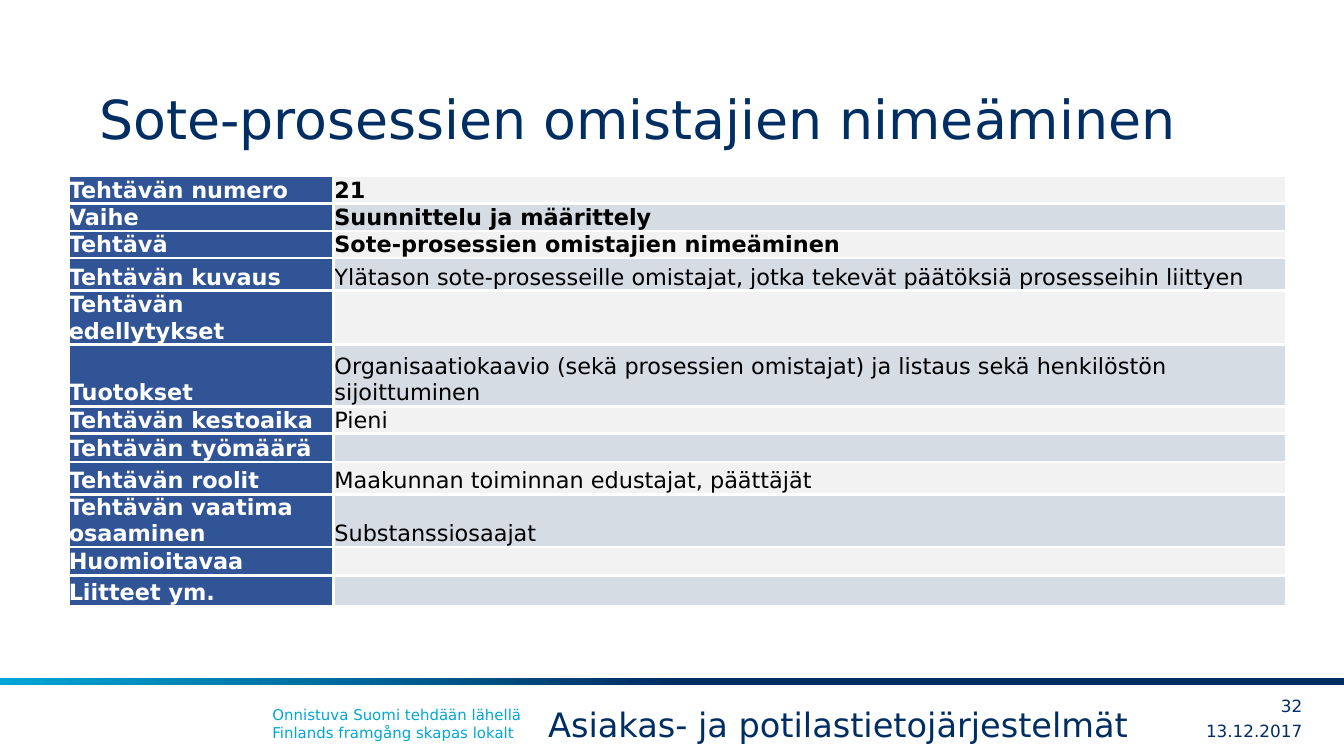
from dataclasses import dataclass

from lxml import etree
from pptx import Presentation
from pptx.dml.color import RGBColor
from pptx.enum import shapes, text
from pptx.oxml import ns
from pptx.util import Cm, Pt

FONT = "DejaVu Sans"
NAVY, CYAN, WHITE, BLACK = "002E63", "00A6D6", "FFFFFF", "000000"
LABEL_FILL = "305496"
BANDS = ("F2F2F2", "D6DCE4")


@dataclass
class Label:
    content: str
    left: float
    top: float
    width: float
    height: float
    size: float
    color: str = NAVY
    margins: tuple = (0.25, 0.13, 0.25, 0.13)
    anchor: text.MSO_ANCHOR = text.MSO_ANCHOR.TOP
    align: text.PP_ALIGN = text.PP_ALIGN.LEFT
    wrap: bool = True


@dataclass
class TaskRow:
    label: str
    value: str
    height: float
    bold: bool = False


LABELS = [
    Label("Onnistuva Suomi tehdään lähellä\vFinlands framgång skapas lokalt",
          4.9, 13.21, 16.61, 0.94, 8, CYAN),
    Label("13.12.2017", 22.1, 13.54, 2.51, 0.56, 9, margins=(0, 0, 0, 0),
          anchor=text.MSO_ANCHOR.MIDDLE, align=text.PP_ALIGN.RIGHT),
    Label("32", 23.52, 13.06, 1.09, 0.56, 9, margins=(0, 0, 0, 0),
          anchor=text.MSO_ANCHOR.MIDDLE, align=text.PP_ALIGN.RIGHT),
    Label("Sote-prosessien omistajien nimeäminen", 1.88, 0.58, 21.62, 2.39, 28.8,
          margins=(0, 0.13, 0, 0.13), anchor=text.MSO_ANCHOR.BOTTOM),
    Label("Asiakas- ja potilastietojärjestelmät", 10.11, 13.18, 11.76, 1.02, 18,
          wrap=False),
]

ROWS = [
    TaskRow("Tehtävän numero", "21", 0.51, True),
    TaskRow("Vaihe", "Suunnittelu ja määrittely", 0.51, True),
    TaskRow("Tehtävä", "Sote-prosessien omistajien nimeäminen", 0.51, True),
    TaskRow("Tehtävän kuvaus", "Ylätason sote-prosesseille omistajat, jotka tekevät "
            "päätöksiä prosesseihin liittyen", 0.61),
    TaskRow("Tehtävän edellytykset", "", 1.02),
    TaskRow("Tuotokset", "Organisaatiokaavio (sekä prosessien omistajat) ja listaus "
            "sekä henkilöstön sijoittuminen", 1.17),
    TaskRow("Tehtävän kestoaika", "Pieni", 0.51),
    TaskRow("Tehtävän työmäärä", "", 0.51),
    TaskRow("Tehtävän roolit", "Maakunnan toiminnan edustajat, päättäjät", 0.61),
    TaskRow("Tehtävän vaatima osaaminen", "Substanssiosaajat", 0.99),
    TaskRow("Huomioitavaa", "", 0.51),
    TaskRow("Liitteet ym.", "", 0.58),
]


def rgb(value: str) -> RGBColor:
    return RGBColor.from_string(value)


def set_margins(target, margins: tuple) -> None:
    for side, value in zip(("left", "top", "right", "bottom"), margins):
        setattr(target, f"margin_{side}", Cm(value))


def style_runs(p, size: float, color: str, bold: bool = False) -> None:
    for r in p.runs:
        for name, value in dict(name=FONT, size=Pt(size), bold=bold).items():
            setattr(r.font, name, value)
        r.font.color.rgb = rgb(color)


def add_label(s, label: Label) -> None:
    box = s.shapes.add_textbox(*map(Cm, (label.left, label.top, label.width, label.height)))
    tf = box.text_frame
    tf.word_wrap = label.wrap
    tf.vertical_anchor = label.anchor
    set_margins(tf, label.margins)
    tf.text = label.content
    p = tf.paragraphs[0]
    p.alignment = label.align
    style_runs(p, label.size, label.color)


def add_footer_bar(s) -> None:
    bar = s.shapes.add_shape(shapes.MSO_SHAPE.RECTANGLE, 0, Cm(12.82), Cm(25.4), Cm(0.13))
    bar.shadow.inherit = False
    bar.line.fill.background()
    bar.fill.gradient()
    bar.fill.gradient_angle = 180
    for stop, (position, color) in zip(bar.fill.gradient_stops, ((0.5, NAVY), (1, CYAN))):
        stop.position = position
        stop.color.rgb = rgb(color)


def add_borders(cell) -> None:
    tc_pr = cell._tc.get_or_add_tcPr()
    for index, side in enumerate(("lnL", "lnR", "lnT", "lnB")):
        line = etree.Element(ns.qn(f"a:{side}"), w=str(Pt(1.5)))
        fill = etree.SubElement(line, ns.qn("a:solidFill"))
        etree.SubElement(fill, ns.qn("a:srgbClr"), val=WHITE)
        tc_pr.insert(index, line)


def fill_cell(cell, content: str, fill: str, color: str, bold: bool, margins: tuple) -> None:
    cell.fill.solid()
    cell.fill.fore_color.rgb = rgb(fill)
    add_borders(cell)
    cell.vertical_anchor = text.MSO_ANCHOR.BOTTOM
    set_margins(cell, margins)
    p = cell.text_frame.paragraphs[0]
    if content:
        p.text = content
        style_runs(p, 12, color, bold)
    else:
        etree.SubElement(p._p, ns.qn("a:endParaRPr"), sz="1200")


def add_task_table(s, rows: list[TaskRow]) -> None:
    widths = (5, 18.01)
    height = sum(row.height for row in rows)
    table = s.shapes.add_table(len(rows), len(widths), Cm(1.3), Cm(3.33),
                               Cm(sum(widths)), Cm(height)).table
    for column, width in zip(table.columns, widths):
        column.width = Cm(width)
    for i, row in enumerate(rows):
        table.rows[i].height = Cm(row.height)
        fill_cell(table.cell(i, 0), row.label, LABEL_FILL, WHITE, True, (0, 0, 0, 0))
        fill_cell(table.cell(i, 1), row.value, BANDS[i % 2], BLACK, row.bold,
                  (0.02, 0.02, 0.02, 0))


def main() -> None:
    prs = Presentation()
    prs.slide_width, prs.slide_height = Cm(25.4), Cm(14.29)
    s = prs.slides.add_slide(prs.slide_layouts[6])
    add_footer_bar(s)
    add_task_table(s, ROWS)
    for label in LABELS:
        add_label(s, label)
    prs.save("out.pptx")


if __name__ == "__main__":
    main()
